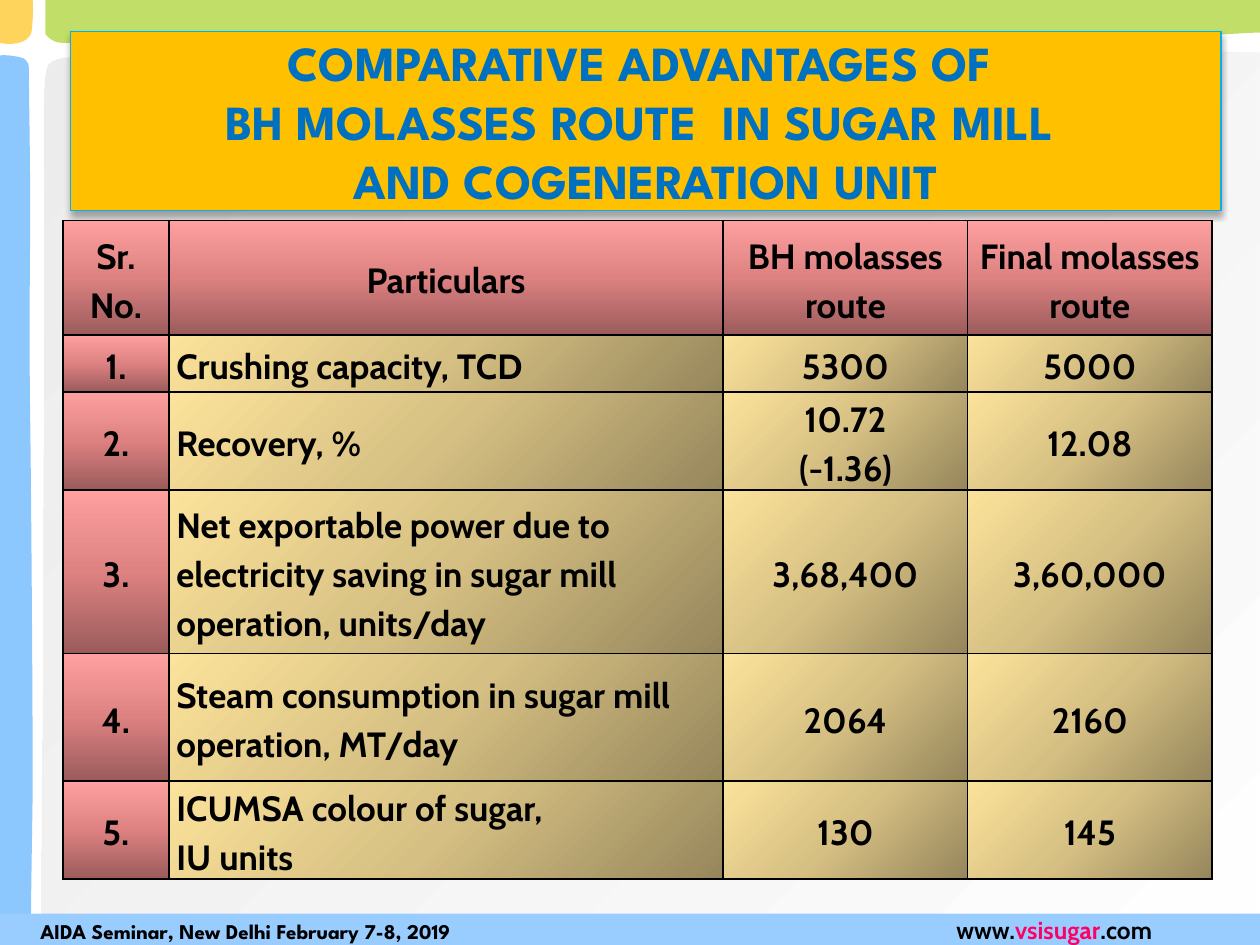
from lxml import etree
from pptx import Presentation
from pptx.dml.color import RGBColor
from pptx.enum.shapes import MSO_SHAPE as SHAPE
from pptx.enum.text import MSO_ANCHOR as ANCHOR, MSO_AUTO_SIZE as AUTO, PP_ALIGN as ALIGN
from pptx.oxml import parse_xml
from pptx.oxml.ns import nsdecls, qn
from pptx.util import Inches, Pt

W, H = 10, 7.5
BODY, DISPLAY = "Cabin", "League Spartan"
BLACK, BLUE = "000000", "0070C0"

# Gradients: (position %, colour, opacity %) stops and an angle
PINK = ([(0, "9B5B5B", 100), (50, "DD8181", 100), (100, "FFA0A0", 100)], 270)
GOLD = ([(0, "96865C", 100), (50, "D5BF82", 100), (100, "FCE39B", 100)], 225)
GREY = ([(0, "E6E6E6", 70), (100, "FFFFFF", 100)], 45)

# Outlines in inches: a pair is a line, six numbers are a Bezier curve
PANEL = [(10, 7.5), (10, 0.42), (8.86, 0.38, 8.55, 0.42, 7.6, 0.42),
         (6.66, 0.42, 5.5, 0.43, 4.33, 0.42), (3.16, 0.41, 1.23, 0.41, 0.57, 0.45),
         (0.36, 0.48, 0.36, 0.49, 0.35, 0.73), (0.34, 0.96, 0.35, 1.1, 0.35, 1.82),
         (0.35, 2.56, 0.34, 4.12, 0.34, 5.06), (0.34, 6.01, 0.32, 6.62, 0.33, 7.5)]
TOP_BAND = [(10, 0), (10, 0.26), (10.01, 0.25, 9.28, 0.31, 8.32, 0.32),
            (7.36, 0.33, 5.31, 0.3, 4.26, 0.31), (3.21, 0.33, 2.65, 0.31, 2.03, 0.31),
            (1.4, 0.32, 0.77, 0.34, 0.49, 0.34), (0.41, 0.34, 0.36, 0.27, 0.36, 0.27),
            (0.36, 0.27, 0.36, 0.14, 0.36, 0)]
SIDE_BAND = [(0, 7.49), (0.25, 7.5), (0.24, 7.51, 0.25, 6.98, 0.26, 6.28),
             (0.26, 5.58, 0.25, 4.07, 0.24, 3.3), (0.23, 2.54, 0.24, 2.12, 0.24, 1.67),
             (0.24, 1.21, 0.23, 0.75, 0.23, 0.54), (0.23, 0.48, 0.18, 0.46, 0.18, 0.46),
             (0.07, 0.43, 0, 0.44, 0, 0.44)]
CORNER = [(0, 0), (0.26, 0), (0.27, 0.12, 0.25, 0.26, 0.25, 0.26),
          (0.23, 0.31, 0.19, 0.33, 0.15, 0.34), (0.07, 0.36, 0, 0.34, 0, 0.34)]

TITLE = ["COMPARATIVE ADVANTAGES OF ", "BH MOLASSES ROUTE  IN SUGAR MILL ",
         "AND COGENERATION UNIT"]
COLS = [0.84, 4.4, 1.94, 1.94]
ROWS = [0.91, 0.45, 0.65, 1.3, 1.01, 0.68]
CELLS = [
    ["Sr. No.", "Particulars", "BH molasses route", "Final molasses route"],
    ["1.", "Crushing capacity, TCD", "5300", "5000"],
    ["2.", "Recovery, %", "10.72\n(-1.36)", "12.08"],
    ["3.", "Net exportable power due to electricity saving in sugar mill operation, units/day",
     "3,68,400", "3,60,000"],
    ["4.", "Steam consumption in sugar mill operation, MT/day", "2064", "2160"],
    ["5.", "ICUMSA colour of sugar,\nIU units", "130", "145"],
]


def rgb(color):
    return RGBColor.from_string(color)


def add_run(p, text, size, font=BODY, color=BLACK):
    r = p.add_run()
    r.text = text
    r.font.size, r.font.name, r.font.bold = Pt(size), font, True
    r.font.color.rgb = rgb(color)


def set_gradient(fill, props, stops, angle):
    """Swap the solid fill in props for a linear gradient."""
    fill.solid()
    gs = "".join(f'<a:gs pos="{pos * 1000}"><a:srgbClr val="{color}">'
                 f'<a:alpha val="{alpha * 1000}"/></a:srgbClr></a:gs>'
                 for pos, color, alpha in stops)
    grad = parse_xml(f'<a:gradFill {nsdecls("a")} rotWithShape="1"><a:gsLst>{gs}</a:gsLst>'
                     f'<a:lin ang="{angle * 60000}" scaled="0"/></a:gradFill>')
    props.replace(props.find(qn("a:solidFill")), grad)


def set_borders(cell):
    tc_pr = cell._tc.get_or_add_tcPr()
    for i, side in enumerate("LRTB"):
        tc_pr.insert(i, parse_xml(
            f'<a:ln{side} {nsdecls("a")} w="12700"><a:solidFill><a:srgbClr val="{BLACK}"/>'
            f'</a:solidFill></a:ln{side}>'))


def add_outline(slide, outline):
    """Build a freeform through the end points, then bend its curved sides."""
    start, *ends = [(Inches(part[-2]), Inches(part[-1])) for part in outline]
    builder = slide.shapes.build_freeform(*start)
    builder.add_line_segments(ends, close=True)
    sp = builder.convert_to_shape()
    sides = list(sp._element.spPr.iter(qn("a:lnTo")))
    for side, part in zip(sides, outline[1:]):
        if len(part) == 6:
            side.tag = qn("a:cubicBezTo")
            for i in (0, 1):
                x, y = Inches(part[2 * i]) - sp.left, Inches(part[2 * i + 1]) - sp.top
                side.insert(i, parse_xml(f'<a:pt {nsdecls("a")} x="{x}" y="{y}"/>'))
    sp.shadow.inherit = False
    sp.line.fill.background()
    return sp


def add_backdrop(slide):
    panel = add_outline(slide, PANEL)
    set_gradient(panel.fill, panel._element.spPr, *GREY)
    for outline, color in ((TOP_BAND, "A8D02A"), (SIDE_BAND, "5CB1FE"), (CORNER, "FFC319")):
        sp = add_outline(slide, outline)
        sp.fill.solid()
        sp.fill.fore_color.rgb = rgb(color)
        clr = sp._element.spPr.find(".//" + qn("a:srgbClr"))
        etree.SubElement(clr, qn("a:alpha")).set("val", "70000")


def add_footer(slide):
    sp = slide.shapes.add_shape(SHAPE.RECTANGLE, 0, Inches(H - 0.25), Inches(W), Inches(0.25))
    sp.shadow.inherit = False
    sp.fill.solid()
    sp.fill.fore_color.rgb = rgb("99CCFF")
    sp.line.fill.background()
    tf = sp.text_frame
    tf.word_wrap = True
    tf.vertical_anchor = ANCHOR.MIDDLE
    tf.margin_left, tf.margin_right = Inches(0.32), 0
    tf.margin_top = tf.margin_bottom = 0
    p = tf.paragraphs[0]
    p.alignment = ALIGN.LEFT
    # The web address starts at a tab stop
    tabs = etree.SubElement(p._p.get_or_add_pPr(), qn("a:tabLst"))
    etree.SubElement(tabs, qn("a:tab"), pos=str(Inches(7.27)), algn="l")
    add_run(p, "AIDA Seminar, New Delhi February 7-8, 2019\t", 12, DISPLAY)
    for text, color in (("www.", BLACK), ("vsisugar", "FF0066"), (".com", BLACK)):
        add_run(p, text, 14, color=color)


def add_title(slide):
    sp = slide.shapes.title
    slide.shapes._spTree.append(sp._element)  # bring in front of the backdrop
    sp.left, sp.top, sp.width, sp.height = (Inches(v) for v in (0.56, 0.25, 9.13, 1.42))
    sp.fill.solid()
    sp.fill.fore_color.rgb = rgb("FFC000")
    sp.line.color.rgb = rgb("00B0F0")
    sp.line.width = Pt(1)
    sp._element.spPr.append(parse_xml(
        f'<a:effectLst {nsdecls("a")}><a:outerShdw blurRad="{Pt(3.5)}" dist="{Pt(2.2)}" '
        f'dir="5400000" rotWithShape="0"><a:srgbClr val="{BLACK}"><a:alpha val="32000"/>'
        f'</a:srgbClr></a:outerShdw></a:effectLst>'))
    tf = sp.text_frame
    tf.word_wrap, tf.auto_size = True, AUTO.NONE
    tf.vertical_anchor = ANCHOR.MIDDLE
    p = tf.paragraphs[0]
    p.alignment, p.line_spacing = ALIGN.CENTER, Pt(33.7)
    for i, line in enumerate(TITLE):
        if i:
            p.add_line_break()
        add_run(p, line, 28, DISPLAY, BLUE)


def fill_cell(cell, text, gradient, align):
    cell.vertical_anchor = ANCHOR.MIDDLE
    cell.margin_left = cell.margin_right = Inches(0.06)
    cell.margin_top = cell.margin_bottom = 0
    set_gradient(cell.fill, cell._tc.get_or_add_tcPr(), *gradient)
    set_borders(cell)
    tf = cell.text_frame
    for i, line in enumerate(text.split("\n")):
        p = tf.add_paragraph() if i else tf.paragraphs[0]
        p.alignment, p.line_spacing = align, 1.15
        add_run(p, line, 20)


def add_comparison(slide):
    table = slide.shapes.add_table(len(ROWS), len(COLS), Inches(0.5), Inches(1.75),
                                   Inches(sum(COLS)), Inches(sum(ROWS))).table
    table.first_row = table.horz_banding = False
    for column, width in zip(table.columns, COLS):
        column.width = Inches(width)
    for i, (row, height) in enumerate(zip(table.rows, ROWS)):
        row.height = Inches(height)
        for j, text in enumerate(CELLS[i]):
            is_header = i == 0 or j == 0
            align = ALIGN.LEFT if j == 1 and not is_header else ALIGN.CENTER
            fill_cell(table.cell(i, j), text, PINK if is_header else GOLD, align)


def main():
    prs = Presentation()
    prs.slide_width, prs.slide_height = Inches(W), Inches(H)
    slide = prs.slides.add_slide(prs.slide_layouts[5])  # title only
    add_backdrop(slide)
    add_footer(slide)
    add_title(slide)
    add_comparison(slide)
    prs.save("out.pptx")


if __name__ == "__main__":
    main()
